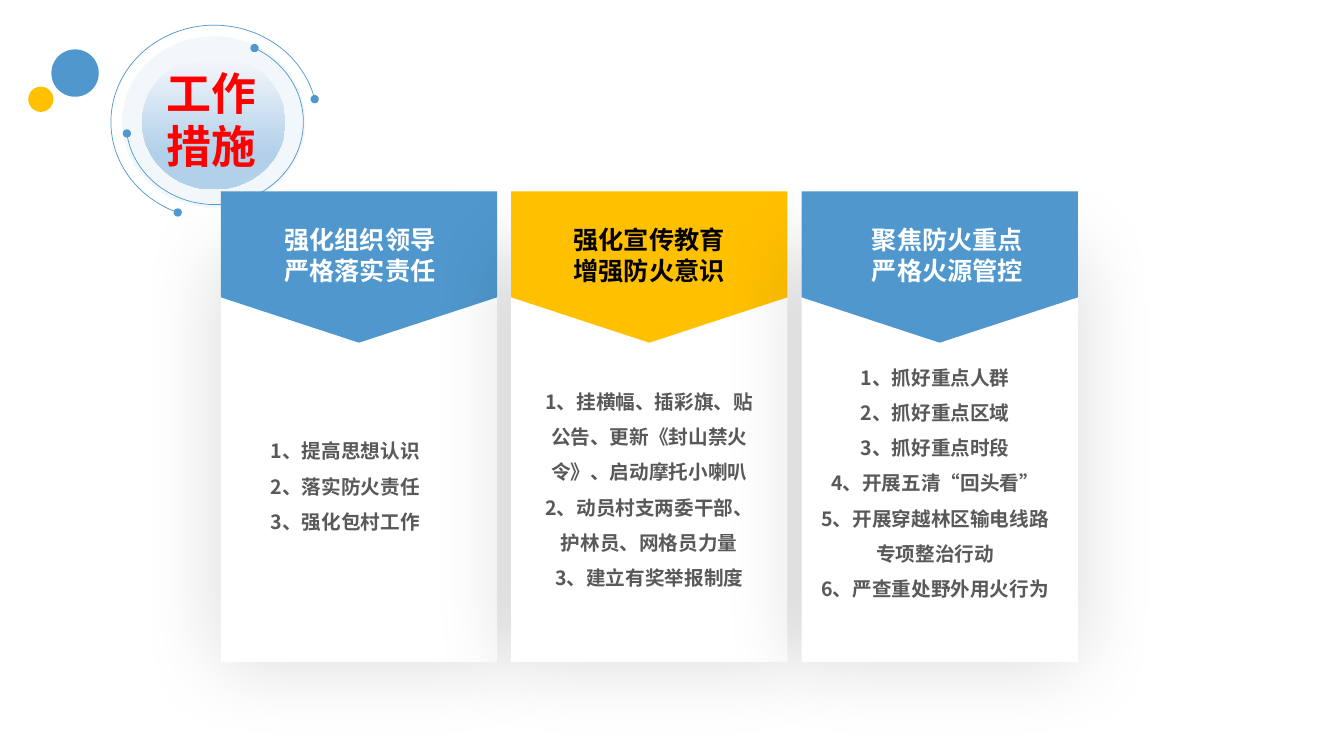
from lxml import etree
from pptx import Presentation
from pptx import util as u
from pptx.dml.color import RGBColor
from pptx.enum import shapes, text
from pptx.oxml import parse_xml
from pptx.oxml.ns import qn

BLUE = RGBColor(0x4F, 0x97, 0xCD)
YELLOW = RGBColor(0xFF, 0xC0, 0x00)
WHITE = RGBColor(0xFF, 0xFF, 0xFF)
BLACK = RGBColor(0x00, 0x00, 0x00)
RED = RGBColor(0xFF, 0x00, 0x00)
GREY = RGBColor(0x59, 0x59, 0x59)
PALE = RGBColor(0xF6, 0xF8, 0xFC)
SKY = RGBColor(0xB1, 0xD0, 0xE9)

CJK = "Noto Sans CJK SC"
SHAPE = shapes.MSO_SHAPE
CENTER = text.PP_ALIGN.CENTER
LEFT = text.PP_ALIGN.LEFT

CARD_SHADOW = (
    '<a:effectLst xmlns:a="http://schemas.openxmlformats.org/drawingml/2006/main">'
    '<a:outerShdw blurRad="762000" dist="0" dir="0" algn="ctr" rotWithShape="0">'
    '<a:srgbClr val="000000"><a:alpha val="15000"/></a:srgbClr>'
    '</a:outerShdw></a:effectLst>'
)


class MeasuresSlide:
    heading = {"size": u.Pt(18), "bold": True, "name": CJK}
    body = {"size": u.Pt(14), "bold": True, "name": CJK}
    title_font = {"size": u.Pt(32), "bold": True, "name": "Montserrat"}

    def __init__(self, deck):
        self.slide = deck.slides.add_slide(deck.slide_layouts[5])

    def place(self, kind, box, adjustments=()):
        part = self.slide.shapes.add_shape(kind, *map(u.Inches, box))
        part.shadow.inherit = False
        part.line.fill.background()
        for index, value in enumerate(adjustments):
            part.adjustments[index] = value
        return part

    def solid(self, kind, box, color, adjustments=(), alpha=None):
        part = self.place(kind, box, adjustments)
        part.fill.solid()
        part.fill.fore_color.rgb = color
        if alpha is not None:
            tint = part.element.spPr.find(qn("a:solidFill"))[0]
            etree.SubElement(tint, qn("a:alpha")).set("val", str(alpha * 1000))
        return part

    def gradient_disc(self, box):
        disc = self.place(SHAPE.OVAL, box)
        disc.fill.gradient()
        disc.fill.gradient_angle = 270
        for stop, color, position in zip(disc.fill.gradient_stops, (PALE, SKY), (0, 0.74)):
            stop.color.rgb = color
            stop.position = position

    def orbit(self, box, start, end):
        arc = self.place(SHAPE.ARC, box, (start, end))
        arc.fill.background()
        arc.line.color.rgb = BLUE
        arc.line.width = u.Pt(0.5)
        outline = arc.element.spPr.find(qn("a:ln"))
        for tip in ("a:headEnd", "a:tailEnd"):
            etree.SubElement(outline, qn(tip)).set("type", "oval")

    def card(self, left):
        panel = self.solid(SHAPE.RECTANGLE, (left, 2.52, 2.74, 4.05), WHITE)
        properties = panel.element.spPr
        properties.replace(properties.find(qn("a:effectLst")), parse_xml(CARD_SHADOW))

    def banner(self, left, color):
        plate = self.solid(SHAPE.PENTAGON, (left + 0.62, 1.28, 1.5, 2.74), color, (0.3,))
        plate.rotation = 90

    def set_text(self, holder, lines, style, color, spacing, align, margins=None):
        frame = holder.text_frame
        settings = {
            "word_wrap": True,
            "auto_size": text.MSO_AUTO_SIZE.NONE,
            "vertical_anchor": text.MSO_ANCHOR.TOP,
        }
        if margins is not None:
            for side in ("left", "right", "top", "bottom"):
                settings["margin_" + side] = margins
        for name, value in settings.items():
            setattr(frame, name, value)
        frame.text = "\n".join(lines)
        for paragraph in frame.paragraphs:
            paragraph.alignment = align
            paragraph.line_spacing = u.Pt(spacing)
            paragraph.space_before = u.Pt(0)
            for run in paragraph.runs:
                for name, value in style.items():
                    setattr(run.font, name, value)
                run.font.color.rgb = color
                east_asian = etree.SubElement(run.font._element, qn("a:ea"))
                east_asian.set("typeface", CJK)

    def text_box(self, box, *args):
        self.set_text(self.slide.shapes.add_textbox(*map(u.Inches, box)), *args)

    def title(self, box, lines):
        heading = self.slide.shapes.title
        for name, value in zip(("left", "top", "width", "height"), box):
            setattr(heading, name, u.Inches(value))
        self.set_text(heading, lines, self.title_font, RED, 38, CENTER)
        self.slide.shapes.element.append(heading.element)


COLUMNS = [
    {
        "banner": BLUE,
        "heading": ["强化组织领导严格落实责任"],
        "heading_color": WHITE,
        "heading_box": (2.72, 2.17, 1.92, 0.71),
        "measures": ["1、提高思想认识", "2、落实防火责任", "3、强化包村工作"],
        "measures_box": (2.12, 4.24, 2.61, 2.59),
    },
    {
        "banner": YELLOW,
        "heading": ["强化宣传教育", "增强防火意识"],
        "heading_color": BLACK,
        "heading_box": (5.59, 2.17, 2.16, 0.71),
        "measures": [
            "1、挂横幅、插彩旗、贴公告、更新《封山禁火令》、启动摩托小喇叭",
            "2、动员村支两委干部、护林员、网格员力量",
            "3、建立有奖举报制度",
        ],
        "measures_box": (5.39, 3.75, 2.1, 2.47),
    },
    {
        "banner": BLUE,
        "heading": ["聚焦防火重点严格火源管控"],
        "heading_color": WHITE,
        "heading_box": (8.55, 2.17, 1.77, 0.71),
        "measures": [
            "1、抓好重点人群",
            "2、抓好重点区域",
            "3、抓好重点时段",
            "4、开展五清“回头看”",
            "5、开展穿越林区输电线路",
            "专项整治行动",
            "6、严查重处野外用火行为",
        ],
        "measures_box": (7.95, 3.51, 2.65, 2.47),
    },
]


def main():
    deck = Presentation()
    deck.slide_width, deck.slide_height = u.Inches(13.33), u.Inches(7.5)
    page = MeasuresSlide(deck)

    page.solid(SHAPE.OVAL, (0.51, 0.49, 0.47, 0.47), BLUE)
    page.solid(SHAPE.OVAL, (0.28, 0.86, 0.25, 0.25), YELLOW)

    for index, column in enumerate(COLUMNS):
        left = 2.19 + 2.88 * index
        page.card(left)
        page.banner(left, column["banner"])
    for column in COLUMNS:
        page.text_box(column["measures_box"], column["measures"], page.body, GREY, 25.2, CENTER, 0)

    page.solid(SHAPE.OVAL, (1.21, 0.36, 1.82, 1.7), BLUE, alpha=7)
    page.gradient_disc((1.41, 0.55, 1.42, 1.33))
    page.orbit((1.1, 0.25, 2.05, 1.92), 67.17, 208.33)
    page.orbit((1.25, 0.39, 1.76, 1.64), 179, 103.51)
    page.title((1.3, 0.61, 1.59, 1.18), ["工作", "措施"])

    for column in COLUMNS:
        page.text_box(column["heading_box"], column["heading"], page.heading,
                      column["heading_color"], 22, LEFT)

    deck.save("out.pptx")


if __name__ == "__main__":
    main()
